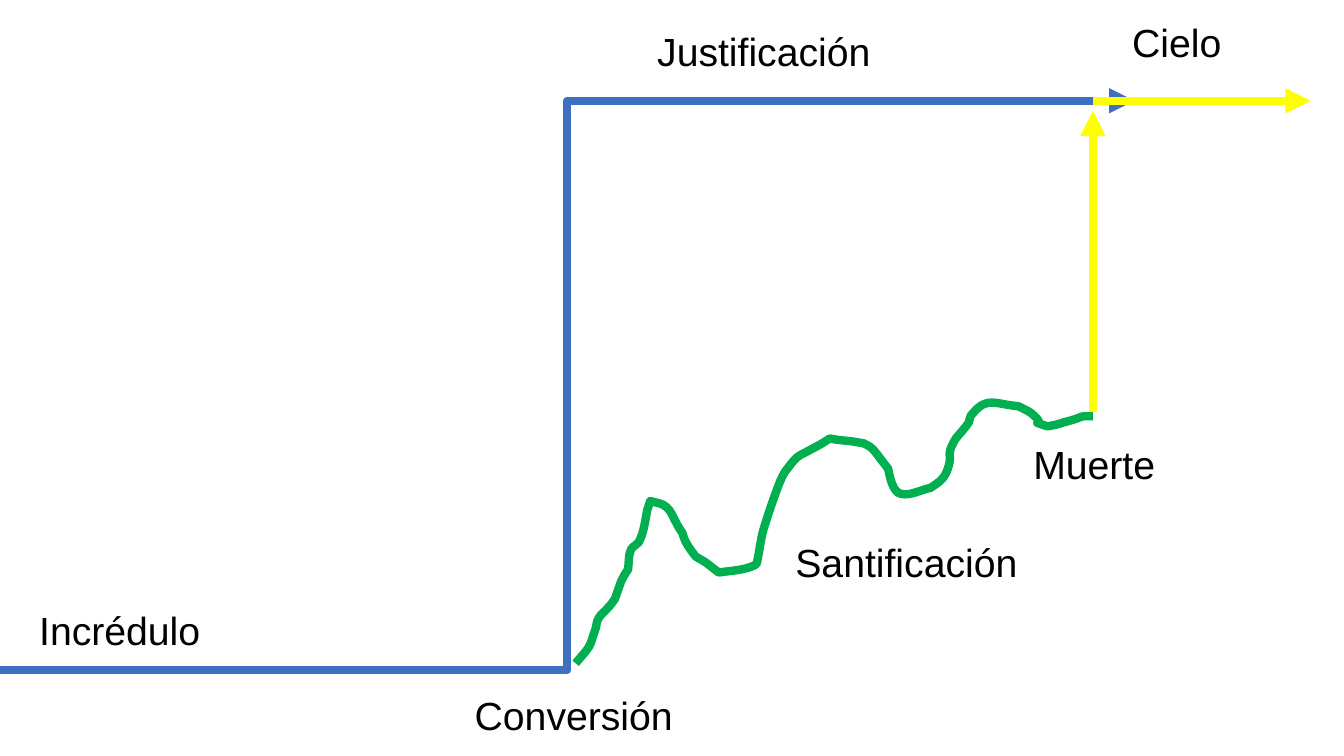
"""Build a slide that charts conversion, justification and sanctification."""
from lxml.etree import SubElement
from pptx import Presentation
from pptx.dml.color import RGBColor
from pptx.enum.shapes import MSO_CONNECTOR
from pptx.oxml.ns import qn
from pptx.util import Inches, Pt

BLACK = RGBColor(0, 0, 0)
BLUE = RGBColor(0x3F, 0x6F, 0xC3)
GREEN = RGBColor(0x00, 0xB0, 0x50)
YELLOW = RGBColor(0xFF, 0xFF, 0x00)

LABELS = [
    ("Incrédulo", 0.29, 5.97, 2.2),
    ("Conversión", 4.61, 6.81, 2.2),
    ("Justificación", 6.42, 0.22, 2.66),
    ("Santificación", 7.79, 5.29, 2.59),
    ("Muerte", 10.15, 4.32, 2.2),
    ("Cielo", 11.13, 0.13, 2.2),
]
FAITH = (MSO_CONNECTOR.ELBOW, 0, 6.65, 11.25, 1, BLUE)
HEAVEN = [
    (MSO_CONNECTOR.STRAIGHT, 10.84, 4.09, 10.84, 1.1, YELLOW),
    (MSO_CONNECTOR.STRAIGHT, 10.84, 1, 13, 1, YELLOW),
]
LEFT, TOP, RIGHT, BOTTOM = 5.71, 3.99, 10.84, 6.58
CURVES = [
    ((5.75, 6.53), (5.8, 6.48), (5.84, 6.42)),
    ((5.87, 6.37), (5.88, 6.31), (5.9, 6.26)),
    ((5.92, 6.22), (5.91, 6.17), (5.94, 6.13)),
    ((5.96, 6.09), (6, 6.07), (6.03, 6.03)),
    ((6.06, 6), (6.08, 5.97), (6.1, 5.94)),
    ((6.12, 5.88), (6.14, 5.83), (6.16, 5.77)),
    ((6.18, 5.73), (6.2, 5.69), (6.23, 5.65)),
    ((6.24, 5.58), (6.23, 5.51), (6.26, 5.45)),
    ((6.28, 5.41), (6.34, 5.4), (6.35, 5.35)),
    ((6.39, 5.26), (6.4, 5.16), (6.42, 5.06)),
    ((6.43, 5.03), (6.44, 5), (6.45, 4.97)),
    ((6.51, 4.99), (6.57, 4.99), (6.61, 5.03)),
    ((6.66, 5.07), (6.68, 5.14), (6.71, 5.19)),
    ((6.73, 5.23), (6.75, 5.26), (6.77, 5.29)),
    ((6.78, 5.32), (6.79, 5.36), (6.81, 5.39)),
    ((6.83, 5.43), (6.87, 5.48), (6.9, 5.52)),
    ((6.93, 5.54), (6.97, 5.56), (7, 5.58)),
    ((7.04, 5.61), (7.09, 5.65), (7.13, 5.68)),
    ((7.25, 5.66), (7.37, 5.66), (7.48, 5.61)),
    ((7.52, 5.6), (7.51, 5.55), (7.52, 5.52)),
    ((7.54, 5.42), (7.55, 5.32), (7.58, 5.23)),
    ((7.63, 5.07), (7.68, 4.92), (7.74, 4.77)),
    ((7.76, 4.73), (7.78, 4.68), (7.81, 4.65)),
    ((7.92, 4.5), (7.92, 4.53), (8.06, 4.45)),
    ((8.12, 4.42), (8.17, 4.39), (8.23, 4.35)),
    ((8.32, 4.37), (8.42, 4.37), (8.52, 4.39)),
    ((8.55, 4.39), (8.58, 4.4), (8.61, 4.42)),
    ((8.65, 4.44), (8.68, 4.48), (8.71, 4.52)),
    ((8.74, 4.56), (8.77, 4.6), (8.81, 4.65)),
    ((8.82, 4.7), (8.85, 4.89), (8.94, 4.9)),
    ((9.03, 4.92), (9.13, 4.86), (9.23, 4.84)),
    ((9.3, 4.79), (9.35, 4.77), (9.39, 4.68)),
    ((9.47, 4.47), (9.36, 4.56), (9.48, 4.35)),
    ((9.52, 4.3), (9.57, 4.25), (9.61, 4.19)),
    ((9.62, 4.16), (9.62, 4.12), (9.65, 4.1)),
    ((9.79, 3.93), (9.87, 4.01), (10.1, 4.03)),
    ((10.14, 4.05), (10.19, 4.07), (10.23, 4.1)),
    ((10.42, 4.26), (10.16, 4.15), (10.39, 4.23)),
    ((10.44, 4.22), (10.5, 4.21), (10.55, 4.19)),
    ((10.82, 4.12), (10.65, 4.13), (10.84, 4.13)),
]


def stroke(line, color):
    """Set a thick line with round joins and return its element."""
    line.color.rgb = color
    line.width = Pt(6)
    ln = line._get_or_add_ln()
    SubElement(ln, qn("a:round"))
    return ln


def arrow(slide, kind, x1, y1, x2, y2, color):
    """Add a connector with an arrowhead."""
    link = slide.shapes.add_connector(
        kind, Inches(x1), Inches(y1), Inches(x2), Inches(y2))
    ln = stroke(link.line, color)
    SubElement(ln, qn("a:tailEnd"), type="triangle")
    SubElement(link._element.spPr, qn("a:effectLst"))


def growth(slide):
    """Add the wavy path of sanctification as cubic curves in its frame."""
    pen = slide.shapes.build_freeform(Inches(LEFT), Inches(BOTTOM))
    pen.add_line_segments([(Inches(RIGHT), Inches(TOP))], close=False)
    wave = pen.convert_to_shape()
    track = next(wave._element.iter(qn("a:path")))
    track.remove(track.find(qn("a:lnTo")))
    for curve in CURVES:
        arc = SubElement(track, qn("a:cubicBezTo"))
        for x, y in curve:
            SubElement(arc, qn("a:pt"), x=str(int(Inches(x - LEFT))),
                       y=str(int(Inches(y - TOP))))
    wave.fill.background()
    stroke(wave.line, GREEN)
    wave.shadow.inherit = False


def label(slide, text, left, top, width):
    """Add a text label."""
    box = slide.shapes.add_textbox(
        Inches(left), Inches(top), Inches(width), Inches(0.57))
    frame = box.text_frame
    frame.word_wrap = True
    frame.text = text
    font = frame.paragraphs[0].runs[0].font
    font.name = "Arial"
    font.size = Pt(28)
    font.color.rgb = BLACK


def main():
    """Build and save the slide."""
    deck = Presentation()
    deck.slide_width = Inches(13.33)
    deck.slide_height = Inches(7.5)
    slide = deck.slides.add_slide(deck.slide_layouts[6])
    arrow(slide, *FAITH)
    growth(slide)
    for item in HEAVEN:
        arrow(slide, *item)
    for item in LABELS:
        label(slide, *item)
    deck.save("out.pptx")


if __name__ == "__main__":
    main()
